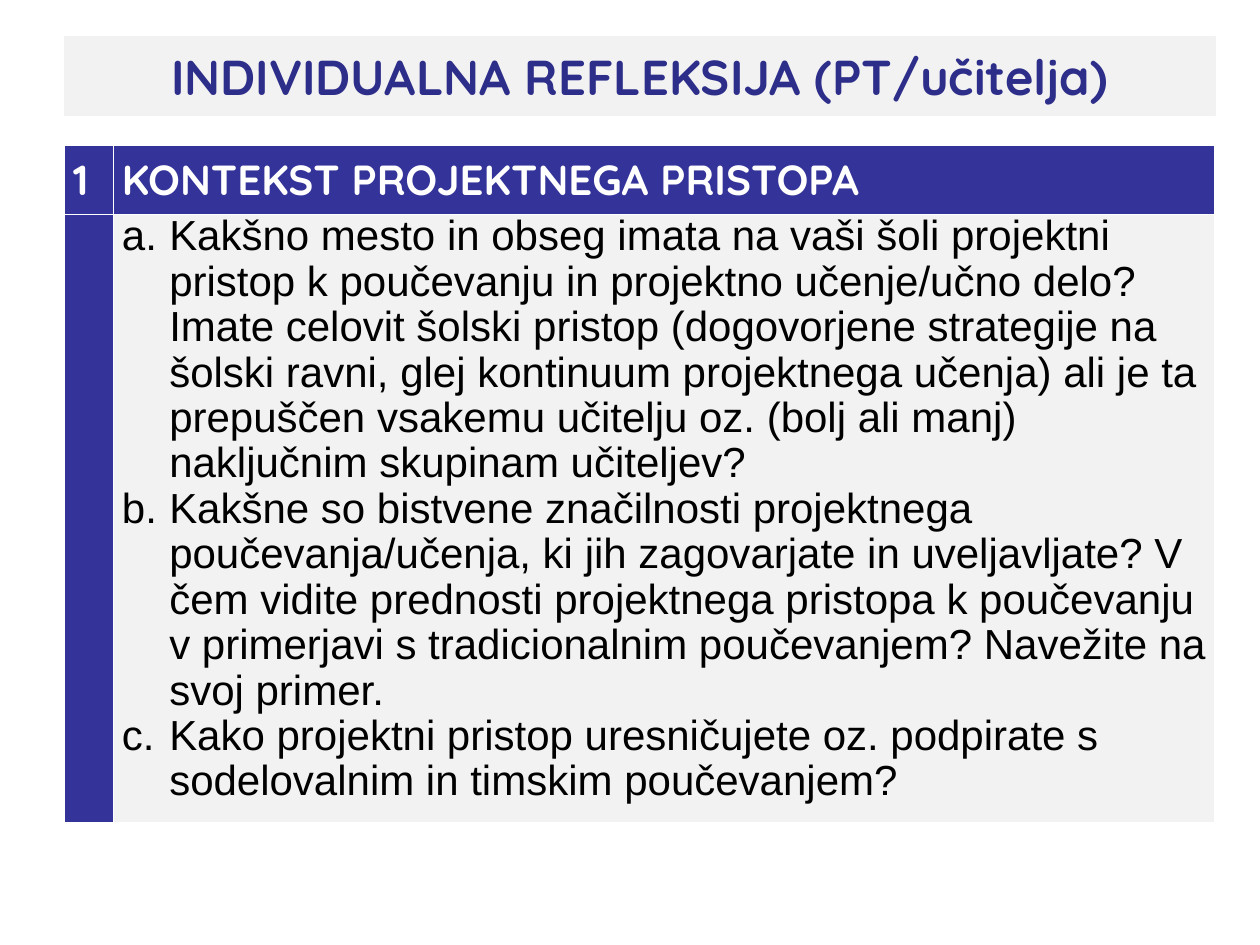
from dataclasses import dataclass

from lxml import etree
from pptx import Presentation
from pptx.dml.color import RGBColor
from pptx.enum import text
from pptx.oxml import ns
from pptx.util import Pt


@dataclass(frozen=True)
class Theme:
    panel: RGBColor = RGBColor.from_string("F2F2F2")
    title: RGBColor = RGBColor.from_string("2D2D8A")
    band: RGBColor = RGBColor.from_string("333399")
    heading: RGBColor = RGBColor.from_string("FFFFFF")
    body: RGBColor = RGBColor.from_string("000000")
    heading_font: str = "Quicksand"
    body_font: str = "Arial"
    title_size: Pt = Pt(28)
    table_size: Pt = Pt(24)


theme = Theme()
left, width = Pt(36.75), Pt(657.5)
number_width = Pt(28)
heading_indent, question_indent = Pt(18), Pt(27)

headings = ["1", "KONTEKST PROJEKTNEGA PRISTOPA"]
questions = [
    "Kakšno mesto in obseg imata na vaši šoli projektni pristop k poučevanju in "
    "projektno učenje/učno delo? Imate celovit šolski pristop (dogovorjene strategije "
    "na šolski ravni, glej kontinuum projektnega učenja) ali je ta prepuščen vsakemu "
    "učitelju oz. (bolj ali manj) naključnim skupinam učiteljev?",
    "Kakšne so bistvene značilnosti projektnega poučevanja/učenja, ki jih zagovarjate "
    "in uveljavljate? V čem vidite prednosti projektnega pristopa k poučevanju v "
    "primerjavi s tradicionalnim poučevanjem? Navežite na svoj primer.",
    "Kako projektni pristop uresničujete oz. podpirate s sodelovalnim in timskim "
    "poučevanjem?",
]


def format_runs(paragraph, font_name, size, color, bold):
    for run in paragraph.runs:
        run.font.name = font_name
        run.font.size = size
        run.font.color.rgb = color
        run.font.bold = bold


def set_hanging_indent(paragraph, indent):
    properties = paragraph._p.get_or_add_pPr()
    properties.set("marL", str(indent))
    properties.set("indent", str(-indent))
    return properties


presentation = Presentation()
presentation.slide_width, presentation.slide_height = Pt(720), Pt(540)
slide = presentation.slides.add_slide(presentation.slide_layouts[5])

# Title
title = slide.shapes.title
title.left, title.top, title.width, title.height = left, Pt(20.75), width, Pt(45.25)
title.fill.solid()
title.fill.fore_color.rgb = theme.panel
title.line.color.rgb = theme.panel
title.line.width = Pt(0.75)
title.text_frame.text = "INDIVIDUALNA REFLEKSIJA (PT/učitelja)"
title.text_frame.auto_size = text.MSO_AUTO_SIZE.NONE
title.text_frame.vertical_anchor = text.MSO_ANCHOR.MIDDLE
title_paragraph = title.text_frame.paragraphs[0]
title_paragraph.alignment = text.PP_ALIGN.CENTER
format_runs(title_paragraph, theme.heading_font, theme.title_size, theme.title, True)

# Table
row_heights = [Pt(39.5), Pt(347.5)]
table = slide.shapes.add_table(2, 2, left, Pt(83), width, sum(row_heights)).table
table.columns[0].width = number_width
table.columns[1].width = width - number_width
for row, height in zip(table.rows, row_heights):
    row.height = height
for cell in table.iter_cells():
    cell.margin_left = cell.margin_right = Pt(5)
    cell.margin_top = cell.margin_bottom = 0
    cell.fill.solid()
    cell.fill.fore_color.rgb = theme.band

# Header row
for column, heading in enumerate(headings):
    cell = table.cell(0, column)
    cell.vertical_anchor = text.MSO_ANCHOR.MIDDLE
    cell.text_frame.text = heading
    paragraph = cell.text_frame.paragraphs[0]
    paragraph.alignment = text.PP_ALIGN.JUSTIFY
    set_hanging_indent(paragraph, heading_indent)
    format_runs(paragraph, theme.heading_font, theme.table_size, theme.heading, True)

# Lettered questions
question_cell = table.cell(1, 1)
question_cell.fill.fore_color.rgb = theme.panel
question_cell.text_frame.text = "\n".join(questions)
for paragraph in question_cell.text_frame.paragraphs:
    paragraph.line_spacing = 0.97
    properties = set_hanging_indent(paragraph, question_indent)
    etree.SubElement(properties, ns.qn("a:buFont"), typeface="+mj-lt")
    etree.SubElement(properties, ns.qn("a:buAutoNum"), type="alphaLcPeriod")
    format_runs(paragraph, theme.body_font, theme.table_size, theme.body, False)

presentation.save("out.pptx")
